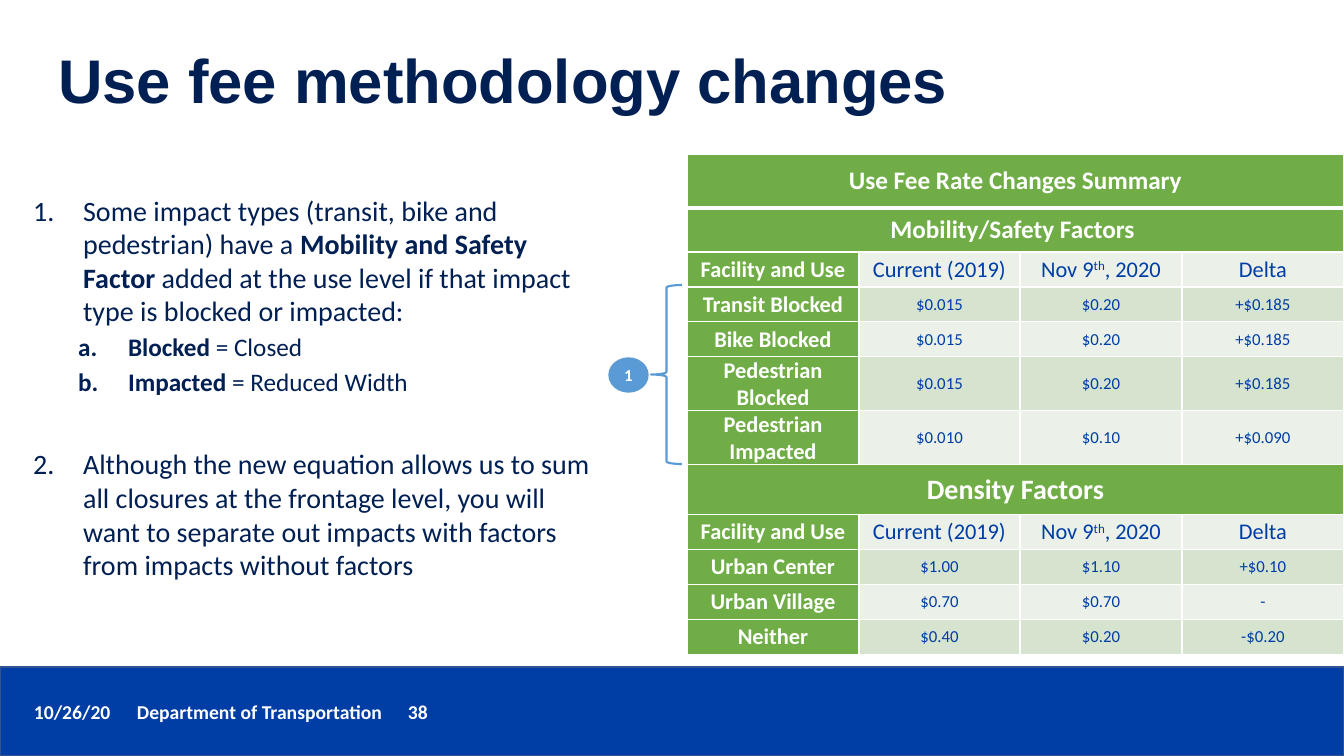
from dataclasses import dataclass
from pptx import Presentation
from pptx.dml.color import RGBColor
from pptx.enum.shapes import MSO_SHAPE
from pptx.enum.text import MSO_ANCHOR, MSO_AUTO_SIZE, PP_ALIGN
from pptx.oxml.ns import qn
from pptx.util import Pt
from lxml.etree import SubElement

# Content
TITLE = "Use fee methodology changes"
FOOTER = ["10/26/20", "Department of Transportation", "38"]
# Each point: level, number style, start, space before, runs of (text, bold)
POINTS = [
    (0, "arabicPeriod", 1, 6, [
        ("Some impact types (transit, bike and pedestrian) have a ", False),
        ("Mobility and Safety Factor ", True),
        ("added at the use level if that impact type is blocked or impacted:", False)]),
    (1, "alphaLcPeriod", 1, 3, [("Blocked", True), (" = Closed", False)]),
    (1, "alphaLcPeriod", 1, 3, [("Impacted", True), (" = Reduced Width", False)]),
    (0, "arabicPeriod", 2, 36, [
        ("Although the new equation allows us to sum all closures at the frontage "
         "level, you will want to separate out impacts with factors from impacts "
         "without factors", False)]),
]
HEAD = ["Facility and Use", "Current (2019)", ("Nov 9", "th", ", 2020"), "Delta"]
RATES = [
    ["Use Fee Rate Changes Summary"],
    ["Mobility/Safety Factors "],
    HEAD,
    ["Transit Blocked", "$0.015", "$0.20", "+$0.185"],
    ["Bike Blocked", "$0.015", "$0.20", "+$0.185"],
    ["Pedestrian Blocked", "$0.015", "$0.20", "+$0.185"],
    ["Pedestrian Impacted", "$0.010", "$0.10", "+$0.090"],
    ["Density Factors"],
    HEAD,
    ["Urban Center", "$1.00", "$1.10", "+$0.10"],
    ["Urban Village", "$0.70", "$0.70", "-"],
    ["Neither", "$0.40", "$0.20", "-$0.20"],
]
COLS = [172, 161, 162, 162]
ROWS = [54, 44, 35, 35, 35, 54, 54, 50, 35, 35, 35, 35]
BANDS = {0: 18, 1: 18, 7: 20}  # full-width rows and their type size


@dataclass(frozen=True)
class Theme:
    navy: str = "001F52"
    blue: str = "003DA5"
    edge: str = "31538F"
    sky: str = "5B9BD5"
    green: str = "70AD47"
    pale: str = "EBF1E9"
    sage: str = "D5E3CF"
    white: str = "FFFFFF"
    head: str = "Arial"
    body: str = "Calibri"
    title: int = 44
    point: int = 20
    sub: int = 18
    label: int = 16
    foot: int = 14
    small: int = 12


T = Theme()


def px(n):
    return round(n * 914400 / 100.8)


def rgb(code):
    return RGBColor.from_string(code)


def place(shape, x, y, w, h):
    shape.left, shape.top, shape.width, shape.height = map(px, (x, y, w, h))


def add_run(para, text, size, color, bold=False, face=T.body):
    run = para.add_run()
    run.text = text
    font = run.font
    font.size, font.bold, font.name = Pt(size), bold, face
    font.color.rgb = rgb(color)
    return run


def add_form(kind, box, fill, line, width):
    form = slide.shapes.add_shape(kind, *map(px, box))
    form.shadow.inherit = False
    if fill:
        form.fill.solid()
        form.fill.fore_color.rgb = rgb(fill)
    else:
        form.fill.background()
    form.line.color.rgb = rgb(line)
    form.line.width = Pt(width)
    return form


def number(para, style, start, left):
    props = para._p.get_or_add_pPr()
    props.set("marL", str(px(left)))
    props.set("indent", str(px(-50)))
    SubElement(props, qn("a:buFont"), typeface=T.body)
    SubElement(props, qn("a:buAutoNum"), type=style, startAt=str(start))


def edge(cell, side, width):
    line = SubElement(cell._tc.get_or_add_tcPr(), qn("a:ln" + side), w=str(Pt(width)))
    fill = SubElement(line, qn("a:solidFill"))
    SubElement(fill, qn("a:srgbClr"), val=T.white)


deck = Presentation()
deck.slide_width, deck.slide_height = px(1344), px(756)
slide = deck.slides.add_slide(deck.slide_layouts[1])

# Footer band, spaced by tab stops
add_form(MSO_SHAPE.RECTANGLE, (0, 667, 1344, 89), T.blue, T.edge, 1)
foot = slide.shapes.add_textbox(*map(px, (24, 695, 1014, 34))).text_frame
foot.word_wrap = True
para = foot.paragraphs[0]
stops = SubElement(para._p.get_or_add_pPr(), qn("a:tabLst"))
for stop in (103, 374):
    SubElement(stops, qn("a:tab"), pos=str(px(stop)), algn="l")
add_run(para, "\t".join(FOOTER), T.foot, T.white, True)

# Title
title = slide.shapes.title
place(title, 48, 11, 1159, 146)
frame = title.text_frame
frame.vertical_anchor = MSO_ANCHOR.MIDDLE
frame.auto_size = MSO_AUTO_SIZE.NONE
para = frame.paragraphs[0]
para.alignment, para.line_spacing = PP_ALIGN.LEFT, 0.9
add_run(para, TITLE, T.title, T.navy, True, T.head)

# Numbered points
body = slide.placeholders[1]
place(body, 23, 188, 582, 408)
frame = body.text_frame
frame.auto_size = MSO_AUTO_SIZE.NONE
for i, (level, style, start, gap, runs) in enumerate(POINTS):
    para = frame.add_paragraph() if i else frame.paragraphs[0]
    para.level, para.space_before = level, Pt(gap)
    number(para, style, start, 95 if level else 50)
    for text, bold in runs:
        add_run(para, text, T.sub if level else T.point, T.navy, bold)

# Rate table
grid = slide.shapes.add_table(len(ROWS), len(COLS), px(687), px(154),
                              px(sum(COLS)), px(sum(ROWS))).table
for c, wide in enumerate(COLS):
    grid.columns[c].width = px(wide)
for r, (high, row) in enumerate(zip(ROWS, RATES)):
    grid.rows[r].height = px(high)
    if r in BANDS:
        grid.cell(r, 0).merge(grid.cell(r, len(COLS) - 1))
    for c in range(len(COLS)):
        cell = grid.cell(r, c)
        for side in "LRTB":
            thick = (r, side) in ((0, "B"), (1, "T"))
            edge(cell, side, 3 if thick else 1)
        key = r in BANDS or c == 0
        stripe = row is not HEAD and RATES[r - 1][0] not in ("Transit Blocked",
                                                             "Pedestrian Blocked",
                                                             "Urban Center")
        cell.fill.solid()
        cell.fill.fore_color.rgb = rgb(T.green if key else T.sage if stripe else T.pale)
        cell.vertical_anchor = MSO_ANCHOR.MIDDLE
        cell.margin_left = cell.margin_right = px(7)
        cell.margin_top = cell.margin_bottom = 0
        if c >= len(row):
            continue
        para = cell.text_frame.paragraphs[0]
        para.alignment = PP_ALIGN.CENTER
        size = BANDS.get(r, T.label if key or row is HEAD else T.small)
        parts = row[c] if isinstance(row[c], tuple) else (row[c],)
        for n, text in enumerate(parts):
            run = add_run(para, text, size, T.white if key else T.blue, key)
            if n == 1:
                run._r.get_or_add_rPr().set("baseline", "30000")

# Brace and its marker
add_form(MSO_SHAPE.LEFT_BRACE, (651, 285, 31, 179), None, T.sky, 1.5)
mark = add_form(MSO_SHAPE.FLOWCHART_CONNECTOR, (609, 358, 39, 34), T.sky, T.sky, 1)
frame = mark.text_frame
frame.margin_left = frame.margin_right = frame.margin_top = frame.margin_bottom = 0
frame.vertical_anchor = MSO_ANCHOR.MIDDLE
para = frame.paragraphs[0]
para.alignment = PP_ALIGN.CENTER
add_run(para, "1", T.small, T.white, True)

deck.save("out.pptx")
